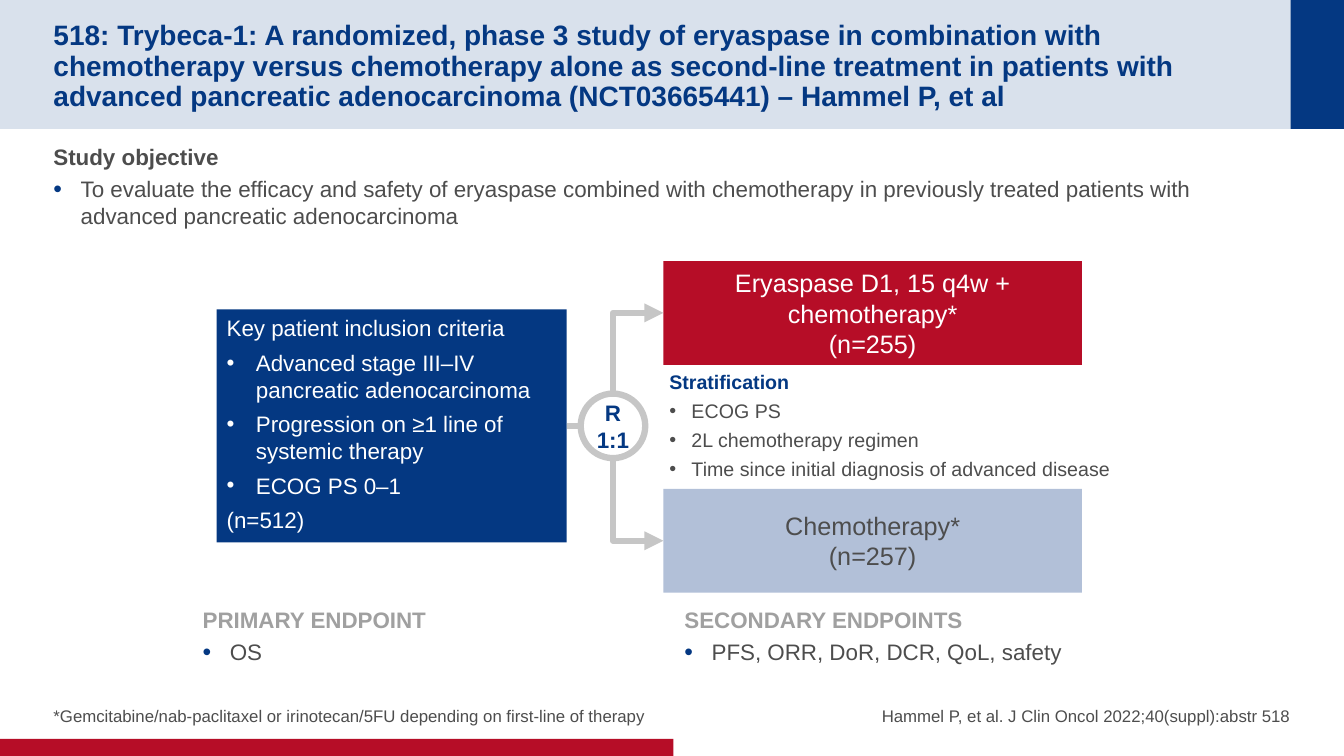
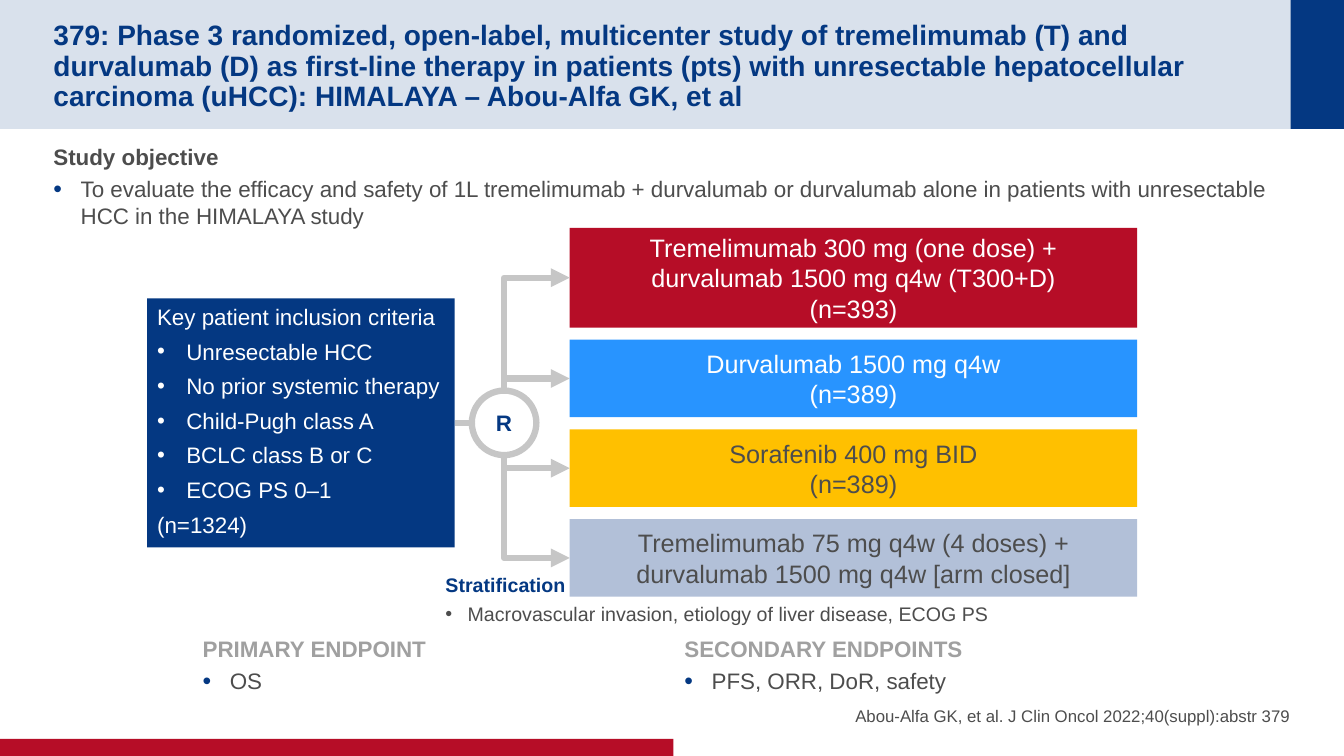
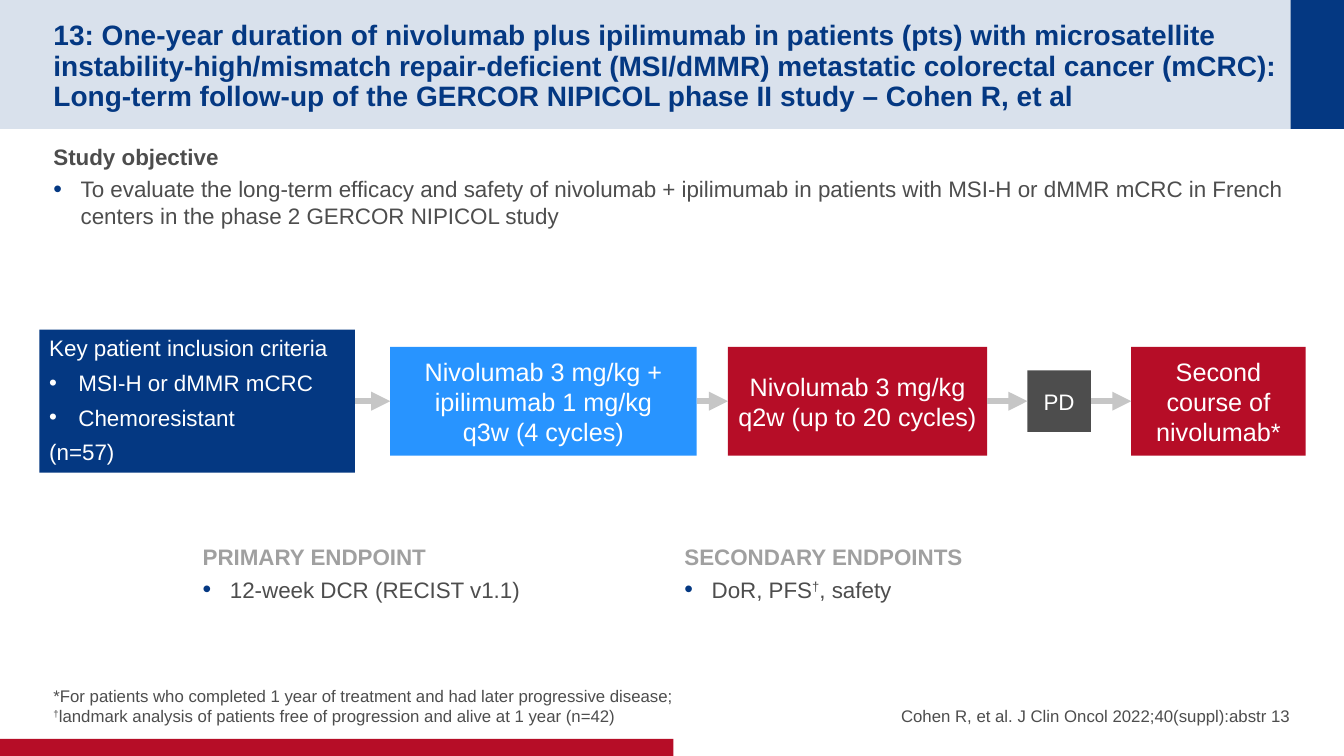
from collections import namedtuple
from dataclasses import dataclass, replace
from itertools import pairwise

from lxml.etree import SubElement
from pptx import Presentation
from pptx.dml.color import RGBColor
from pptx.enum.shapes import MSO_CONNECTOR, MSO_SHAPE
from pptx.enum.text import MSO_ANCHOR, MSO_AUTO_SIZE, PP_ALIGN
from pptx.oxml.ns import qn
from pptx.util import Inches, Pt

NAVY, RED, SKY, AMBER = "043882", "B60D27", "2894FF", "FFC000"
PALE_BLUE, DARK, GREY, SILVER, WHITE = "B2C0D8", "4D4D4D", "A0A0A0", "C6C6C6", "FFFFFF"
RING_SIZE = 0.64

Box = namedtuple("Box", "left top width height")
Arm = namedtuple("Arm", "text fill ink height", defaults=(0.77,))
Step = namedtuple("Step", "text fill left width height size", defaults=(1.08, 18))

TITLE_BOX = Box(0.53, 0.2, 12.27, 0.88)
BODY_BOX = Box(0.53, 1.37, 12.27, 5.19)
CITATION_BOX = Box(6.78, 6.67, 6.02, 0.53)


@dataclass(frozen=True)
class Style:
    """Paragraph look: font, spacing and optional bullet."""
    size: float
    color: str
    bold: bool = False
    align: PP_ALIGN = PP_ALIGN.LEFT
    after: float = 4
    spacing: float = 1.0
    indent: float = 0
    bullet_color: str = ""
    bullet_percent: int = 100


TITLE = Style(20, NAVY, bold=True, after=0, spacing=0.9)
HEADING = Style(16, DARK, bold=True)
ITEM = Style(16, DARK, indent=0.27, bullet_color=NAVY, bullet_percent=110)
ENDPOINT = replace(HEADING, color=GREY)
CRITERION_TEXT = Style(16, WHITE, after=5.5)
CRITERION = replace(CRITERION_TEXT, indent=0.29, bullet_color=WHITE)
FACTOR_HEADING = Style(14, NAVY, bold=True)
FACTOR = Style(14, DARK, indent=0.22, bullet_color=DARK)
NOTE = Style(12, DARK)
CITATION = replace(NOTE, align=PP_ALIGN.RIGHT)
RING_TEXT = Style(16, NAVY, bold=True, align=PP_ALIGN.CENTER, after=0)


def rgb(color):
    """Turn a hex string into a colour."""
    return RGBColor.from_string(color)


def apply(target, **values):
    """Set each named value on the target."""
    for name, value in values.items():
        setattr(target, name, value)


def inches(box):
    """Give the sides of a box as lengths."""
    return [Inches(side) for side in box]


def set_bullet(paragraph, style):
    """Set the indent and the bullet of a paragraph."""
    props = paragraph._p.get_or_add_pPr()
    props.set("marL", str(Inches(style.indent)))
    props.set("indent", str(-Inches(style.indent)))
    if not style.bullet_color:
        SubElement(props, qn("a:buNone"))
        return
    tint = SubElement(props, qn("a:buClr"))
    SubElement(tint, qn("a:srgbClr"), val=style.bullet_color)
    SubElement(props, qn("a:buSzPct"), val=str(style.bullet_percent * 1000))
    SubElement(props, qn("a:buFont"), typeface="Arial")
    SubElement(props, qn("a:buChar"), char="•")


def write(frame, lines, insets=(0.1, 0.05, 0.1, 0.05), anchor=MSO_ANCHOR.TOP, wrap=True):
    """Fill a text frame with styled lines, raising any dagger."""
    left, top, right, bottom = inches(insets)
    apply(frame, auto_size=MSO_AUTO_SIZE.NONE, word_wrap=wrap, vertical_anchor=anchor,
          margin_left=left, margin_top=top, margin_right=right, margin_bottom=bottom)
    for index, (text, style) in enumerate(lines):
        paragraph = frame.add_paragraph() if index else frame.paragraphs[0]
        apply(paragraph, alignment=style.align, line_spacing=style.spacing,
              space_before=Pt(0), space_after=Pt(style.after))
        set_bullet(paragraph, style)
        for row, piece in enumerate(text.split("\n")):
            if row:
                paragraph.add_line_break()
            for part in filter(None, piece.partition("†")):
                run = paragraph.add_run()
                run.text = part
                apply(run.font, name="Arial", size=Pt(style.size), bold=style.bold)
                run.font.color.rgb = rgb(style.color)
                if part == "†":
                    run.font._element.set("baseline", "30000")


def add_text(slide, box, lines, **frame_format):
    """Add a text box."""
    write(slide.shapes.add_textbox(*inches(box)).text_frame, lines, **frame_format)


def add_panel(slide, box, fill):
    """Add a filled rectangle without outline."""
    panel = slide.shapes.add_shape(MSO_SHAPE.RECTANGLE, *inches(box))
    panel.shadow.inherit = False
    panel.fill.solid()
    panel.fill.fore_color.rgb = rgb(fill)
    panel.line.fill.background()
    return panel


def add_treatment(slide, box, text, fill, ink, size=18):
    """Add a treatment box with centred text."""
    treatment = add_panel(slide, box, fill)
    label = Style(size, ink, align=PP_ALIGN.CENTER, after=0)
    write(treatment.text_frame, [(text, label)], (0.1, 0, 0.1, 0), MSO_ANCHOR.MIDDLE)
    return treatment


def add_criteria(slide, box, criteria, count):
    """Add the box of inclusion criteria."""
    panel = add_panel(slide, box, NAVY)
    write(panel.text_frame, [("Key patient inclusion criteria", CRITERION_TEXT),
                             *((text, CRITERION) for text in criteria),
                             (f"(n={count})", CRITERION_TEXT)])
    return panel


def add_link(slide, kind, start, end, arrow=True):
    """Add a silver connector between two points."""
    link = slide.shapes.add_connector(kind, *start, *end)
    link.line.color.rgb = rgb(SILVER)
    link.line.width = Pt(4.5)
    props = link.element.spPr
    if arrow:
        SubElement(props.find(qn("a:ln")), qn("a:tailEnd"), type="triangle")
    SubElement(props, qn("a:effectLst"))
    return link


def add_branch(slide, ring, treatment):
    """Add an elbow arrow from the ring, up or down, to a treatment's left side."""
    x = ring.left + ring.width // 2
    target_y = treatment.top + treatment.height // 2
    up = target_y < ring.top
    y = ring.top if up else ring.top + ring.height
    mid_x, mid_y = (x + treatment.left) // 2, (y + target_y) // 2
    half_run, half_rise = abs(target_y - y) // 2, (treatment.left - x) // 2
    rise = half_rise if up else -half_rise
    branch = add_link(slide, MSO_CONNECTOR.ELBOW, (mid_x + half_run, mid_y + rise),
                      (mid_x - half_run, mid_y - rise))
    props = branch.element.spPr
    props.find(qn("a:xfrm")).set("rot", str((90 if up else 270) * 60000))
    props.find(qn("a:prstGeom")).set("prst", "bentConnector2")
    joints = branch.element.find(".//" + qn("p:cNvCxnSpPr"))
    for tag, shape, site in (("a:stCxn", ring, 0 if up else 4), ("a:endCxn", treatment, 1)):
        SubElement(joints, qn(tag), id=str(shape.shape_id), idx=str(site))


def add_ring(slide, criteria, left, text):
    """Add the randomization ring level with the criteria box."""
    size = Inches(RING_SIZE)
    middle = criteria.top + criteria.height // 2
    ring = slide.shapes.add_shape(MSO_SHAPE.OVAL, Inches(left), middle - size // 2, size, size)
    ring.shadow.inherit = False
    ring.fill.background()
    ring.line.color.rgb = rgb(SILVER)
    ring.line.width = Pt(4.5)
    write(ring.text_frame, [(line, RING_TEXT) for line in text.split("\n")],
          anchor=MSO_ANCHOR.MIDDLE, wrap=False)
    stem = add_link(slide, MSO_CONNECTOR.STRAIGHT, (criteria.left + criteria.width, middle),
                    (ring.left, middle), arrow=False)
    stem.begin_connect(criteria, 3)
    return ring


def add_randomization(slide, criteria, ring_left, ring_text, arms, left, top, width, gap):
    """Add the ring and the stacked treatment arms it leads to."""
    ring = add_ring(slide, criteria, ring_left, ring_text)
    for arm in arms:
        treatment = add_treatment(slide, Box(left, top, width, arm.height),
                                  arm.text, arm.fill, arm.ink)
        add_branch(slide, ring, treatment)
        top += arm.height + gap


def add_sequence(slide, criteria, middle, steps):
    """Add treatment steps in a row, joined by arrows."""
    stops = [criteria]
    for step in steps:
        box = Box(step.left, middle - step.height / 2, step.width, step.height)
        stops.append(add_treatment(slide, box, step.text, step.fill, WHITE, step.size))
    for before, after in pairwise(stops):
        arrow = add_link(slide, MSO_CONNECTOR.STRAIGHT, (0, 0), (0, 0))
        arrow.begin_connect(before, 3)
        arrow.end_connect(after, 1)


def add_stratification(slide, box, factors):
    """Add the list of stratification factors."""
    add_text(slide, box, [("Stratification", FACTOR_HEADING),
                          *((factor, FACTOR) for factor in factors)])


def add_endpoints(slide, top, primary, secondary):
    """Add the primary and secondary endpoints side by side."""
    add_text(slide, Box(2.01, top, 4.52, 0.77),
             [("PRIMARY ENDPOINT", ENDPOINT), (primary, ITEM)], insets=(0, 0.05, 0, 0.05))
    add_text(slide, Box(6.69, top, 4.86, 0.73),
             [("SECONDARY ENDPOINTS", ENDPOINT), (secondary, ITEM)])


def add_footer(slide, box, text, style):
    """Add a line of small print at the foot of the slide."""
    add_text(slide, box, [(text, style)], insets=(0, 0, 0, 0), anchor=MSO_ANCHOR.BOTTOM)


def add_study(prs, title, objective, citation):
    """Add a slide with its title, objective and citation."""
    slide = prs.slides.add_slide(prs.slide_layouts[1])
    write(slide.shapes.title.text_frame, [(title, TITLE)], (0, 0.05, 0, 0), MSO_ANCHOR.MIDDLE)
    write(slide.placeholders[1].text_frame,
          [("Study objective", HEADING), (objective, ITEM)], (0, 0.05, 0, 0.05))
    add_footer(slide, CITATION_BOX, citation, CITATION)
    return slide


def place_placeholders(layout):
    """Move the title and body of the layout."""
    for placeholder in layout.placeholders:
        box = {0: TITLE_BOX, 1: BODY_BOX}.get(placeholder.placeholder_format.idx)
        if box:
            apply(placeholder, **dict(zip(Box._fields, inches(box))))


def add_master_bands(prs, slide):
    """Draw the bands and move them to the back of the master."""
    header = add_panel(slide, Box(0, 0, 13.33, 1.28), NAVY)
    tint = header.element.spPr.find(".//" + qn("a:srgbClr"))
    SubElement(tint, qn("a:alpha"), val="15000")
    corner = add_panel(slide, Box(12.8, 0, 0.53, 1.28), NAVY)
    foot = add_panel(slide, Box(0, 7.33, 6.68, 0.17), RED)
    for order, band in enumerate((header, corner, foot)):
        band.element.find(".//" + qn("p:cNvPr")).set("id", str(100 + order))
        prs.slide_master.shapes.element.insert(2 + order, band.element)


def build_trybeca(prs):
    """Build the eryaspase study."""
    slide = add_study(
        prs,
        "518: Trybeca-1: A randomized, phase 3 study of eryaspase in combination with "
        "chemotherapy versus chemotherapy alone as second-line treatment in patients with "
        "advanced pancreatic adenocarcinoma (NCT03665441) – Hammel P, et al",
        "To evaluate the efficacy and safety of eryaspase combined with chemotherapy in "
        "previously treated patients with advanced pancreatic adenocarcinoma",
        "Hammel P, et al. J Clin Oncol 2022;40(suppl):abstr 518")
    criteria = add_criteria(slide, Box(2.15, 3.07, 3.47, 2.31), [
        "Advanced stage III–IV pancreatic adenocarcinoma",
        "Progression on ≥1 line of systemic therapy", "ECOG PS 0–1"], 512)
    arms = [Arm("Eryaspase D1, 15 q4w + chemotherapy*\n(n=255)", RED, WHITE, 1.03),
            Arm("Chemotherapy*\n(n=257)", PALE_BLUE, DARK, 1.03)]
    add_randomization(slide, criteria, 5.76, "R\n1:1", arms, 6.58, 2.59, 4.15, 1.23)
    add_stratification(slide, Box(6.54, 3.62, 4.63, 0.98), [
        "ECOG PS", "2L chemotherapy regimen",
        "Time since initial diagnosis of advanced disease"])
    add_endpoints(slide, 5.96, "OS", "PFS, ORR, DoR, DCR, QoL, safety")
    add_footer(slide, Box(0.53, 6.67, 6.02, 0.53),
               "*Gemcitabine/nab-paclitaxel or irinotecan/5FU depending on first-line of therapy",
               NOTE)


def build_himalaya(prs):
    """Build the tremelimumab and durvalumab study."""
    slide = add_study(
        prs,
        "379: Phase 3 randomized, open-label, multicenter study of tremelimumab (T) and "
        "durvalumab (D) as first-line therapy in patients (pts) with unresectable "
        "hepatocellular carcinoma (uHCC): HIMALAYA – Abou-Alfa GK, et al",
        "To evaluate the efficacy and safety of 1L tremelimumab + durvalumab or durvalumab "
        "alone in patients with unresectable HCC in the HIMALAYA study",
        "Abou-Alfa GK, et al. J Clin Oncol 2022;40(suppl):abstr 379")
    criteria = add_criteria(slide, Box(1.46, 2.96, 3.05, 2.47), [
        "Unresectable HCC", "No prior systemic therapy", "Child-Pugh class A",
        "BCLC class B or C", "ECOG PS 0–1"], 1324)
    arms = [Arm("Tremelimumab 300 mg (one dose) +\ndurvalumab 1500 mg q4w (T300+D)\n(n=393)",
                RED, WHITE, 0.99),
            Arm("Durvalumab 1500 mg q4w\n(n=389)", SKY, WHITE),
            Arm("Sorafenib 400 mg BID\n(n=389)", AMBER, DARK),
            Arm("Tremelimumab 75 mg q4w (4 doses) + durvalumab 1500 mg q4w [arm closed]",
                PALE_BLUE, DARK)]
    add_randomization(slide, criteria, 4.68, "R", arms, 5.65, 2.26, 5.63, 0.12)
    add_stratification(slide, Box(4.32, 5.63, 5.83, 0.98),
                       ["Macrovascular invasion, etiology of liver disease, ECOG PS"])
    add_endpoints(slide, 6.25, "OS", "PFS, ORR, DoR, safety")


def build_nipicol(prs):
    """Build the nivolumab and ipilimumab study."""
    slide = add_study(
        prs,
        "13: One-year duration of nivolumab plus ipilimumab in patients (pts) with "
        "microsatellite instability-high/mismatch repair-deficient (MSI/dMMR) metastatic "
        "colorectal cancer (mCRC): Long-term follow-up of the GERCOR NIPICOL phase II study "
        "– Cohen R, et al",
        "To evaluate the long-term efficacy and safety of nivolumab + ipilimumab in patients "
        "with MSI-H or dMMR mCRC in French centers in the phase 2 GERCOR NIPICOL study",
        "Cohen R, et al. J Clin Oncol 2022;40(suppl):abstr 13")
    criteria = add_criteria(slide, Box(0.39, 3.27, 3.13, 1.42),
                            ["MSI-H or dMMR mCRC", "Chemoresistant"], 57)
    add_sequence(slide, criteria, 3.98, [
        Step("Nivolumab 3 mg/kg + ipilimumab 1 mg/kg\nq3w (4 cycles)", SKY, 3.87, 3.04),
        Step("Nivolumab 3 mg/kg q2w (up to 20 cycles)", RED, 7.22, 2.57),
        Step("PD", DARK, 10.19, 0.63, 0.61, 16),
        Step("Second course of nivolumab*", RED, 11.22, 1.73)])
    add_endpoints(slide, 5.34, "12-week DCR (RECIST v1.1)", "DoR, PFS†, safety")
    add_footer(slide, Box(0.53, 6.67, 6.74, 0.53),
               "*For patients who completed 1 year of treatment and had later progressive "
               "disease; †landmark analysis of patients free of progression and alive at "
               "1 year (n=42)", NOTE)


def main():
    """Build and save the presentation."""
    prs = Presentation()
    apply(prs, slide_width=Inches(13.33), slide_height=Inches(7.5))
    place_placeholders(prs.slide_layouts[1])
    for build in (build_trybeca, build_himalaya, build_nipicol):
        build(prs)
    add_master_bands(prs, prs.slides[0])
    prs.save("out.pptx")


if __name__ == "__main__":
    main()
